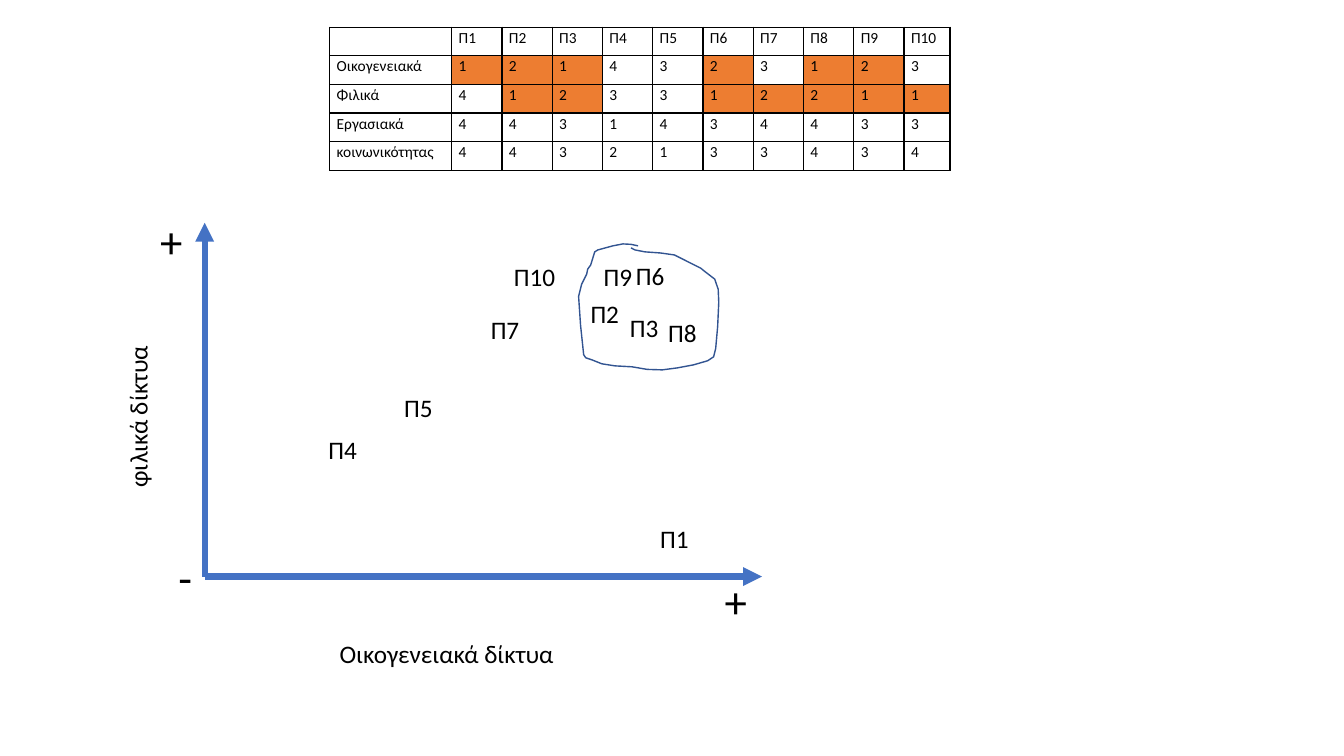
from lxml.etree import SubElement
from pptx import Presentation
from pptx.dml.color import RGBColor as Rgb
from pptx.enum.shapes import MSO_CONNECTOR as Connector
from pptx.enum.text import MSO_AUTO_SIZE as AutoSize
from pptx.oxml import parse_xml
from pptx.oxml.ns import nsdecls, qn
from pptx.util import Inches, Pt

WIDTH, HEIGHT = Inches(13.33), Inches(7.5)
FONT = "Calibri"
COLORS = {"text": "000000", "border": "000000", "plain": "FFFFFF",
          "strong": "ED7D31", "axis": "4472C4", "outline": "325491"}

# Ranking of each kind of network, participants Π1 to Π10
RANKS = {
    "Οικογενειακά": [1, 2, 1, 4, 3, 2, 3, 1, 2, 3],
    "Φιλικά": [4, 1, 2, 3, 3, 1, 2, 2, 1, 1],
    "Εργασιακά": [4, 4, 3, 1, 4, 3, 4, 4, 3, 3],
    "κοινωνικότητας": [4, 4, 3, 2, 1, 3, 3, 4, 3, 4],
}
COMPARED = ("Οικογενειακά", "Φιλικά")

# All places and sizes are percentages of the slide
ORIGIN, X_END, Y_END = (15.23, 76.27), (56.7, 76.27), (15.23, 29.47)
AXIS_NAMES = [("Οικογενειακά δίκτυα", 24.53, 83.73, 25.43, 0),
              ("φιλικά δίκτυα", 2.93, 50.13, 14.63, 270)]
SIGNS = [("+", 53.18, 75.2), ("+", 11.18, 27.6), ("-", 12.53, 72)]
PARTICIPANTS = [
    ("Π1", 48.38, 68.53), ("Π2", 43.2, 38.8), ("Π3", 46.13, 40.67),
    ("Π6", 46.58, 33.73), ("Π7", 35.78, 40.93), ("Π8", 48.98, 41.33),
    ("Π9", 44.18, 33.87), ("Π10", 37.5, 33.87), ("Π4", 23.7, 56.8),
    ("Π5", 29.33, 51.2),
]
CLUSTER = [
    (47.48, 32.53), (46.95, 32.33), (46.35, 32.27), (45.6, 32.53),
    (44.48, 33.07), (44.25, 33.33), (43.95, 35.07), (43.73, 35.6),
    (43.65, 36.27), (43.28, 37.6), (43.05, 39.2), (43.2, 43.07),
    (43.43, 46.93), (43.58, 47.33), (44.03, 47.6), (44.78, 48.13),
    (45.75, 48.4), (47.03, 48.53), (48.15, 48.87), (49.28, 48.93),
    (50.4, 48.67), (51.6, 48.27), (52.65, 47.73), (53.1, 47.2),
    (53.25, 46.13), (53.4, 43.2), (53.48, 40), (53.44, 38.27),
    (53.18, 36.93), (52.5, 36), (52.13, 35.47), (51.23, 34.67),
    (50.18, 33.73), (49.13, 33.47), (48, 33.33), (47.25, 33.07),
    (46.95, 32.8),
]


def across(share):
    return int(WIDTH * share / 100)


def down(share):
    return int(HEIGHT * share / 100)


def color(name):
    return Rgb.from_string(COLORS[name])


def set_all(target, values):
    for name, value in values.items():
        setattr(target, name, value)


def write(para, text, size):
    span = para.add_run()
    span.text = text
    set_all(span.font, {"name": FONT, "size": Pt(size)})
    span.font.color.rgb = color("text")


def add_label(page, text, left, top, width, height, size, rotation=0):
    box = page.shapes.add_textbox(across(left), down(top), across(width), down(height))
    box.rotation = rotation
    set_all(box.text_frame, {"word_wrap": True, "auto_size": AutoSize.SHAPE_TO_FIT_TEXT})
    write(box.text_frame.paragraphs[0], text, size)


def add_axis(page, start, end):
    axis = page.shapes.add_connector(Connector.STRAIGHT, across(start[0]), down(start[1]),
                                     across(end[0]), down(end[1]))
    axis.line.color.rgb = color("axis")
    axis.line.width = Pt(4.5)
    SubElement(axis.line._get_or_add_ln(), qn("a:tailEnd"), type="triangle")
    SubElement(axis._element.spPr, qn("a:effectLst"))


def add_outline(page, points):
    places = [(across(x), down(y)) for x, y in points]
    builder = page.shapes.build_freeform(*places[0])
    builder.add_line_segments(places[1:], close=False)
    outline = builder.convert_to_shape()
    outline.shadow.inherit = False
    outline.fill.background()
    outline.line.color.rgb = color("outline")
    outline.line.width = Pt(1)


def add_borders(cell):
    properties = cell._tc.get_or_add_tcPr()
    for index, side in enumerate(("lnL", "lnR", "lnT", "lnB")):
        properties.insert(index, parse_xml(
            f'<a:{side} {nsdecls("a")} w="{Pt(1)}"><a:solidFill>'
            f'<a:srgbClr val="{COLORS["border"]}"/></a:solidFill></a:{side}>'))


def fill_cell(cell, text, fill):
    set_all(cell, {"margin_left": Inches(0.07), "margin_right": Inches(0.07),
                   "margin_top": 0, "margin_bottom": 0})
    cell.fill.solid()
    cell.fill.fore_color.rgb = color(fill)
    add_borders(cell)
    para = cell.text_frame.paragraphs[0]
    set_all(para, {"line_spacing": 1.07, "space_after": Pt(8)})
    if text:
        write(para, text, 11)
    else:
        para._p.get_or_add_endParaRPr().set("sz", "1100")


def add_ranking(page):
    header = [""] + [f"Π{number}" for number in range(1, 11)]
    rows = [header] + [[name, *ranks] for name, ranks in RANKS.items()]
    widths = [9.08] + [3.74] * 9 + [3.43]
    row_height = 3.79
    table = page.shapes.add_table(len(rows), len(header), across(24.53), down(3.6),
                                  across(sum(widths)), down(row_height * len(rows))).table
    set_all(table, {"first_row": False, "horz_banding": False})
    for column, width in zip(table.columns, widths):
        column.width = across(width)
    for row, values in zip(table.rows, rows):
        row.height = down(row_height)
        for cell, value in zip(row.cells, values):
            strong = values[0] in COMPARED and value in (1, 2)
            fill_cell(cell, str(value), "strong" if strong else "plain")


def main():
    deck = Presentation()
    set_all(deck, {"slide_width": WIDTH, "slide_height": HEIGHT})
    page = deck.slides.add_slide(deck.slide_layouts[6])

    # Ranking table
    add_ranking(page)

    # Axes with their names and signs
    for end in (X_END, Y_END):
        add_axis(page, ORIGIN, end)
    for text, left, top, width, rotation in AXIS_NAMES:
        add_label(page, text, left, top, width, 5.33, 18, rotation)
    for text, left, top in SIGNS:
        add_label(page, text, left, top, 2.33, 8.53, 32)

    # Participants and the group among them
    for text, left, top in PARTICIPANTS:
        add_label(page, text, left, top, 3.9 if len(text) == 2 else 5.4, 5.33, 18)
    add_outline(page, CLUSTER)

    deck.save("out.pptx")


if __name__ == "__main__":
    main()
